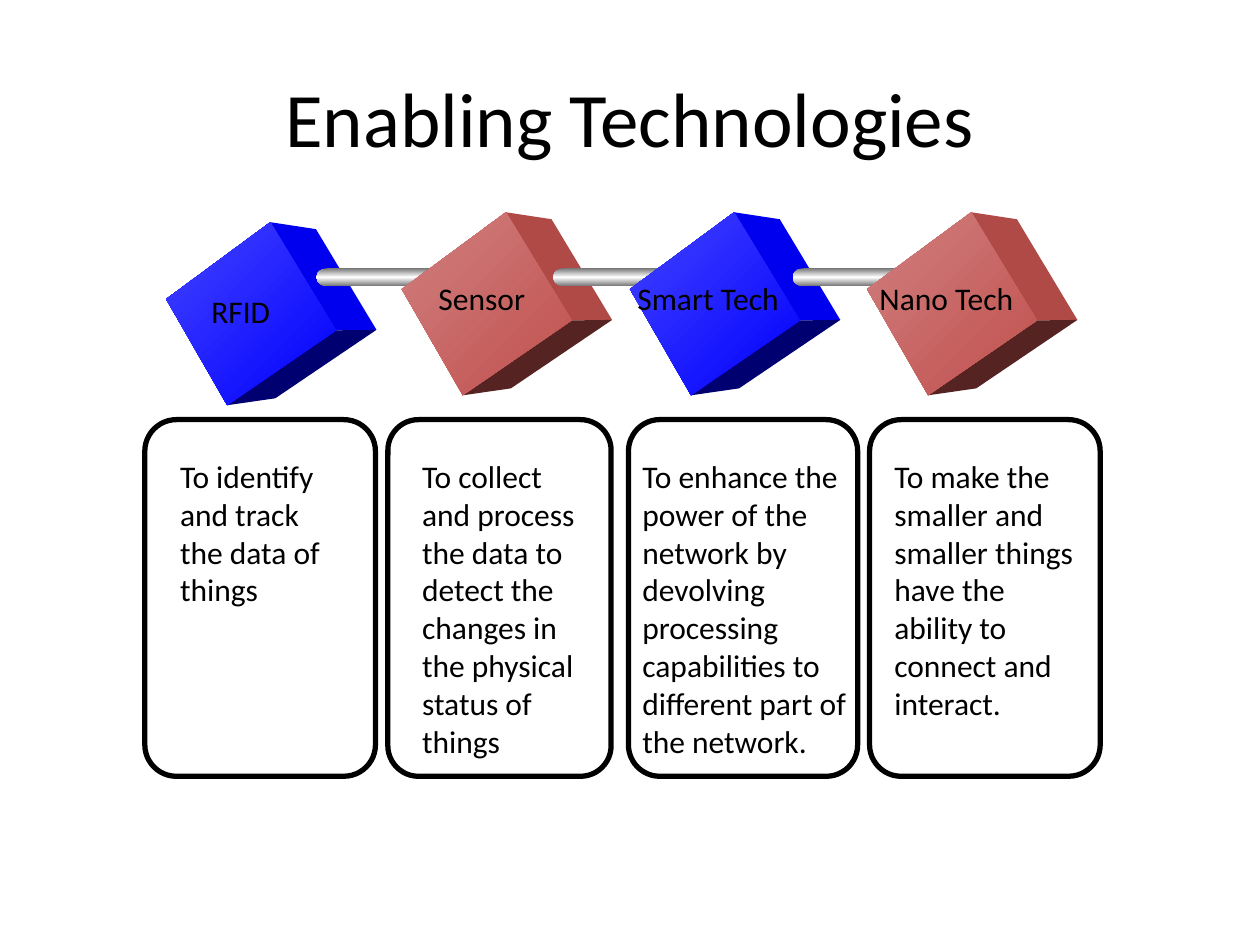
from copy import deepcopy

from pptx import Presentation
from pptx.dml.color import RGBColor
from pptx.enum.shapes import MSO_SHAPE
from pptx.enum.text import MSO_ANCHOR, PP_ALIGN
from pptx.util import Cm, Pt

ROUNDED, OVAL, RECTANGLE = MSO_SHAPE.ROUNDED_RECTANGLE, MSO_SHAPE.OVAL, MSO_SHAPE.RECTANGLE
LEFT, CENTER = PP_ALIGN.LEFT, PP_ALIGN.CENTER
TOP, MIDDLE = MSO_ANCHOR.TOP, MSO_ANCHOR.MIDDLE

COLORS = {
    "ink": "000000", "steel": "767676", "shine": "FFFFFF",
    "blue": "0000FF", "blue light": "4343FF", "blue side": "0000EE", "blue base": "000070",
    "red": "C0504D", "red light": "D08080", "red side": "B04A47", "red base": "552322",
}
TITLE = "Enabling Technologies"
TECHNOLOGIES = [
    dict(label="RFID", label_at=(4.01, 5.77, 2.01), cube=(3.35, 6.03), tone="blue",
         card=(2.92, 4.65), note=(3.38, 3.61), rod=(6.38, 2.39),
         text="To identify and track the data of things"),
    dict(label="Sensor", label_at=(8.59, 5.51, 2.54), cube=(8.1, 5.83), tone="red",
         card=(7.82, 4.5), note=(8.26, 4.01), rod=(11.15, 2.39),
         text="To collect and process the data to detect the changes in the physical "
              "status of things"),
    dict(label="Smart Tech", label_at=(12.6, 5.51, 3.73), cube=(12.7, 5.83), tone="blue",
         card=(12.67, 4.62), note=(12.7, 4.65), rod=(15.98, 3.15),
         text="To enhance the power of the network by devolving processing capabilities "
              "to different part of the network."),
    dict(label="Nano Tech", label_at=(17.48, 5.51, 3.56), cube=(17.48, 5.83), tone="red",
         card=(17.53, 4.65), note=(17.78, 4.24), rod=None,
         text="To make the smaller and smaller things have the ability to connect and "
              "interact."),
]
CARD_TOP, CARD_HEIGHT = 8.46, 7.19
NOTE_TOP, NOTE_HEIGHT = 9.09, 6.4
ROD_TOP, ROD_HEIGHT, ROD_CAP = 5.41, 0.36, 0.44

WEST, NORTH, CORNER, SOUTH = (0, 0), (2.1, -1.55), (3.43, 0.63), (1.23, 2.14)
BACK_NORTH, BACK_EAST, BACK_SOUTH = (3.02, -1.41), (4.24, 0.62), (2.2, 2.0)
FACES = {
    "side": (NORTH, BACK_NORTH, BACK_EAST, CORNER),
    "base": (SOUTH, CORNER, BACK_EAST, BACK_SOUTH),
    "front": (WEST, NORTH, CORNER, SOUTH),
}


def color(name):
    return RGBColor.from_string(COLORS[name])


def fill_gradient(shape, names, angle):
    shape.fill.gradient()
    shape.fill.gradient_angle = angle
    stop_list = shape._element.spPr.gradFill.gsLst
    while len(stop_list) < len(names):
        stop_list.append(deepcopy(stop_list[0]))
    for index, (stop, name) in enumerate(zip(shape.fill.gradient_stops, names)):
        stop.position = index / (len(names) - 1)
        stop.color.rgb = color(name)


def add_text(page, text, left, top, width, height, size=18, align=LEFT, anchor=TOP, wrap=True):
    box = page.shapes.add_textbox(Cm(left), Cm(top), Cm(width), Cm(height))
    frame = box.text_frame
    frame.word_wrap = wrap
    frame.vertical_anchor = anchor
    para = frame.paragraphs[0]
    para.text = text
    para.alignment = align
    para.font.name, para.font.size = "Calibri", Pt(size)
    para.font.color.rgb = color("ink")


def add_card(page, left, width):
    card = page.shapes.add_shape(ROUNDED, Cm(left), Cm(CARD_TOP), Cm(width), Cm(CARD_HEIGHT))
    card.adjustments[0] = 0.137
    card.shadow.inherit = False
    card.fill.background()
    card.line.color.rgb = color("ink")
    card.line.width = Pt(3)


def add_cube(page, left, top, tone):
    for face, corners in FACES.items():
        points = [(Cm(left + x), Cm(top + y)) for x, y in corners]
        builder = page.shapes.build_freeform(*points[0])
        builder.add_line_segments(points[1:], close=True)
        shape = builder.convert_to_shape()
        shape.shadow.inherit = False
        shape.line.fill.background()
        if face == "front":
            fill_gradient(shape, [tone, f"{tone} light"], 135)
        else:
            shape.fill.solid()
            shape.fill.fore_color.rgb = color(f"{tone} {face}")


def add_rod(page, left, width):
    pieces = [(OVAL, left, ROD_CAP), (RECTANGLE, left + ROD_CAP / 2, width - ROD_CAP / 2)]
    for kind, start, length in pieces:
        piece = page.shapes.add_shape(kind, Cm(start), Cm(ROD_TOP), Cm(length), Cm(ROD_HEIGHT))
        piece.shadow.inherit = False
        piece.line.fill.background()
        fill_gradient(piece, ["steel", "shine", "steel"], 90)


def main():
    deck = Presentation()
    deck.slide_width, deck.slide_height = Cm(25.4), Cm(19.05)
    page = deck.slides.add_slide(deck.slide_layouts[6])
    add_text(page, TITLE, 1.27, 0.76, 22.86, 3.18, 44, CENTER, MIDDLE)
    for item in TECHNOLOGIES:
        add_card(page, *item["card"])
        add_cube(page, *item["cube"], item["tone"])
        if item["rod"]:
            add_rod(page, *item["rod"])
    for item in TECHNOLOGIES:
        left, top, width = item["label_at"]
        add_text(page, item["label"], left, top, width, 1.02, wrap=False)
        left, width = item["note"]
        add_text(page, item["text"], left, NOTE_TOP, width, NOTE_HEIGHT)
    deck.save("out.pptx")


if __name__ == "__main__":
    main()
